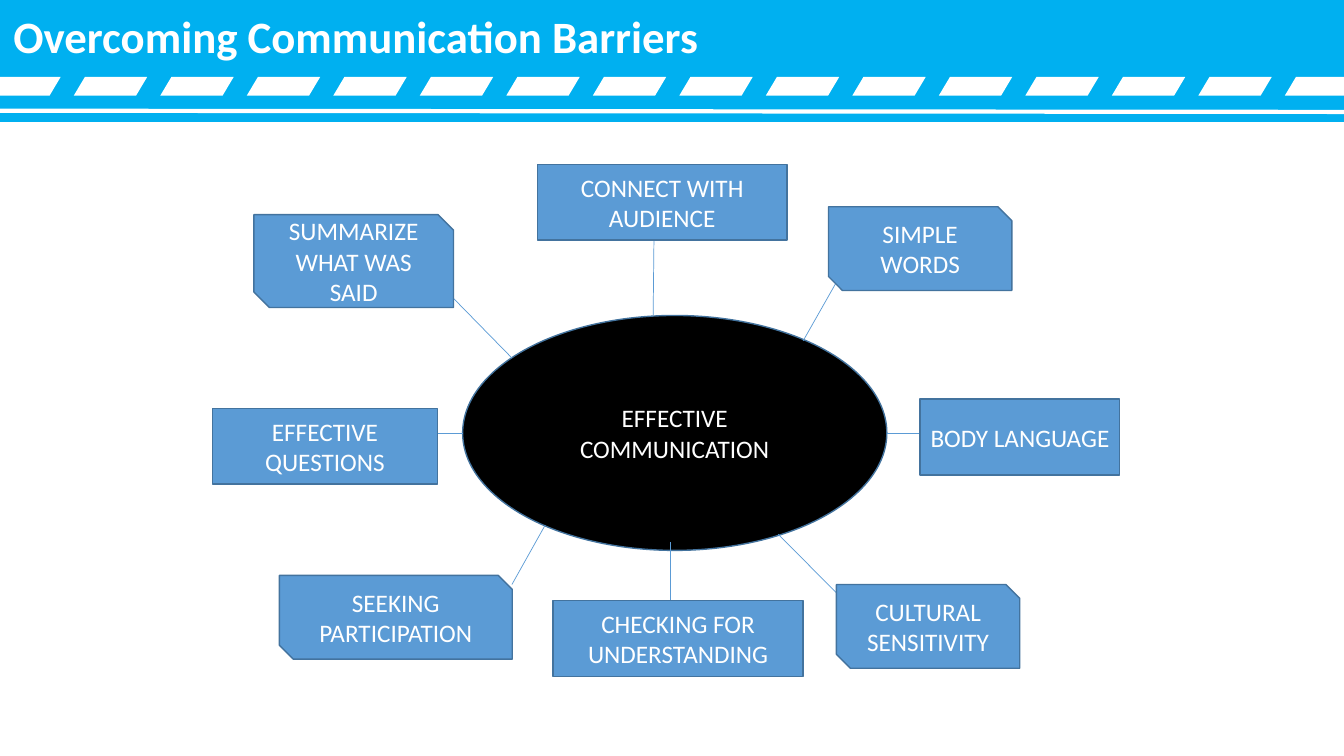
from dataclasses import dataclass

from lxml.etree import SubElement
from pptx import Presentation
from pptx.dml.color import RGBColor
from pptx.enum.shapes import MSO_CONNECTOR, MSO_SHAPE as Preset
from pptx.enum.text import MSO_ANCHOR as Anchor, MSO_AUTO_SIZE as AutoSize, PP_ALIGN as Align
from pptx.oxml.ns import qn
from pptx.shapes.autoshape import Shape
from pptx.slide import Slide
from pptx.text.text import TextFrame
from pptx.util import Cm, Length, Pt


@dataclass(frozen=True)
class Theme:
    band: RGBColor = RGBColor(0x00, 0xB0, 0xF0)
    white: RGBColor = RGBColor(0xFF, 0xFF, 0xFF)
    hub: RGBColor = RGBColor(0x00, 0x00, 0x00)
    box: RGBColor = RGBColor(0x5B, 0x9B, 0xD5)
    border: RGBColor = RGBColor(0x43, 0x73, 0x9E)
    font: str = "Calibri"
    title_size: Length = Pt(32)
    label_size: Length = Pt(18)
    rule_width: Length = Pt(3)
    border_width: Length = Pt(1)
    spoke_width: Length = Pt(0.5)


@dataclass(frozen=True)
class Node:
    """A labelled shape of the diagram, in centimetres."""
    label: str
    left: float
    top: float
    width: float
    height: float = 1.91
    preset: Preset = Preset.RECTANGLE


@dataclass(frozen=True)
class Spoke:
    """A straight line between two points, in centimetres."""
    x1: float
    y1: float
    x2: float
    y2: float


THEME = Theme()
SLIDE_WIDTH, SLIDE_HEIGHT = 33.87, 19.05
SNIPPED = Preset.SNIP_2_DIAG_RECTANGLE

STRIPE_COUNT, STRIPE_START, STRIPE_PITCH = 16, -0.32, 2.18
STRIPE_TOP, STRIPE_BOTTOM = 1.94, 2.41
STRIPE_WIDTH, STRIPE_SLANT = 1.85, 0.28

RULE = Spoke(0, 2.79, SLIDE_WIDTH, 2.82)
HUB = Node("EFFECTIVE COMMUNICATION", 11.66, 7.95, 10.69, 5.92, Preset.OVAL)
SPOKES = [
    Spoke(16.48, 6.05, 16.46, 7.95),
    Spoke(21.08, 7.11, 20.24, 8.59),
    Spoke(16.89, 13.67, 16.89, 15.14),
    Spoke(23.83, 10.92, 22.35, 10.92),
    Spoke(11.66, 10.92, 10.19, 10.92),
    Spoke(19.61, 13.46, 21.08, 14.94),
    Spoke(13.74, 13.23, 12.9, 14.73),
    Spoke(11.43, 7.52, 12.9, 9.02),
]
TECHNIQUES = [
    Node("CONNECT WITH AUDIENCE", 13.54, 4.14, 6.3),
    Node("EFFECTIVE QUESTIONS", 5.36, 10.29, 5.66),
    Node("CHECKING FOR UNDERSTANDING", 13.94, 15.14, 6.3),
    Node("BODY LANGUAGE", 23.19, 10.06, 5.03),
    Node("SUMMARIZE WHAT WAS SAID", 6.4, 5.41, 5.03, 2.34, SNIPPED),
    Node("CULTURAL SENSITIVITY", 21.08, 14.73, 4.62, 2.11, SNIPPED),
    Node("SIMPLE WORDS", 20.88, 5.21, 4.62, 2.11, SNIPPED),
    Node("SEEKING PARTICIPATION", 7.04, 14.5, 5.87, 2.11, SNIPPED),
]


def paint(shape: Shape, fill: RGBColor) -> None:
    """Give a flat fill without outline or shadow."""
    shape.shadow.inherit = False
    shape.fill.solid()
    shape.fill.fore_color.rgb = fill
    shape.line.fill.background()


def write(frame: TextFrame, text: str, size: Length, align: Align, anchor: Anchor) -> None:
    frame.text = text
    frame.word_wrap = True
    frame.vertical_anchor = anchor
    paragraph = frame.paragraphs[0]
    paragraph.alignment = align
    paragraph.font.name = THEME.font
    paragraph.font.size = size
    paragraph.font.color.rgb = THEME.white


def draw_spoke(slide: Slide, spoke: Spoke, color: RGBColor, width: Length) -> None:
    connector = slide.shapes.add_connector(
        MSO_CONNECTOR.STRAIGHT, Cm(spoke.x1), Cm(spoke.y1), Cm(spoke.x2), Cm(spoke.y2))
    connector.line.color.rgb = color
    connector.line.width = width
    SubElement(connector.element.spPr, qn("a:effectLst"))


def draw_node(slide: Slide, node: Node, fill: RGBColor) -> None:
    shape = slide.shapes.add_shape(
        node.preset, Cm(node.left), Cm(node.top), Cm(node.width), Cm(node.height))
    paint(shape, fill)
    shape.line.color.rgb = THEME.border
    shape.line.width = THEME.border_width
    write(shape.text_frame, node.label, THEME.label_size, Align.CENTER, Anchor.MIDDLE)


def draw_stripe(slide: Slide, left: float) -> None:
    right = left + STRIPE_WIDTH
    corners = [
        (right, STRIPE_TOP),
        (right - STRIPE_SLANT, STRIPE_BOTTOM),
        (left, STRIPE_BOTTOM),
    ]
    builder = slide.shapes.build_freeform(Cm(left + STRIPE_SLANT), Cm(STRIPE_TOP))
    builder.add_line_segments([(Cm(x), Cm(y)) for x, y in corners], close=True)
    paint(builder.convert_to_shape(), THEME.white)


def draw_header(slide: Slide) -> None:
    band = slide.shapes.add_shape(Preset.RECTANGLE, 0, 0, Cm(SLIDE_WIDTH), Cm(3.07))
    paint(band, THEME.band)
    for index in range(STRIPE_COUNT):
        draw_stripe(slide, STRIPE_START + index * STRIPE_PITCH)
    draw_spoke(slide, RULE, THEME.white, THEME.rule_width)

    title = slide.shapes.title
    title.left, title.top, title.width, title.height = Cm(0.08), Cm(0.1), Cm(21.03), Cm(1.63)
    write(title.text_frame, "Overcoming Communication Barriers",
          THEME.title_size, Align.LEFT, Anchor.TOP)
    title.text_frame.auto_size = AutoSize.NONE
    title.text_frame.paragraphs[0].font.bold = True
    # The title must lie in front of the band.
    title.element.getparent().append(title.element)


def draw_diagram(slide: Slide) -> None:
    draw_node(slide, HUB, THEME.hub)
    for spoke in SPOKES:
        draw_spoke(slide, spoke, THEME.box, THEME.spoke_width)
    for technique in TECHNIQUES:
        draw_node(slide, technique, THEME.box)


def main() -> None:
    deck = Presentation()
    deck.slide_width, deck.slide_height = Cm(SLIDE_WIDTH), Cm(SLIDE_HEIGHT)
    slide = deck.slides.add_slide(deck.slide_layouts.get_by_name("Title Only"))
    draw_header(slide)
    draw_diagram(slide)
    deck.save("out.pptx")


if __name__ == "__main__":
    main()
